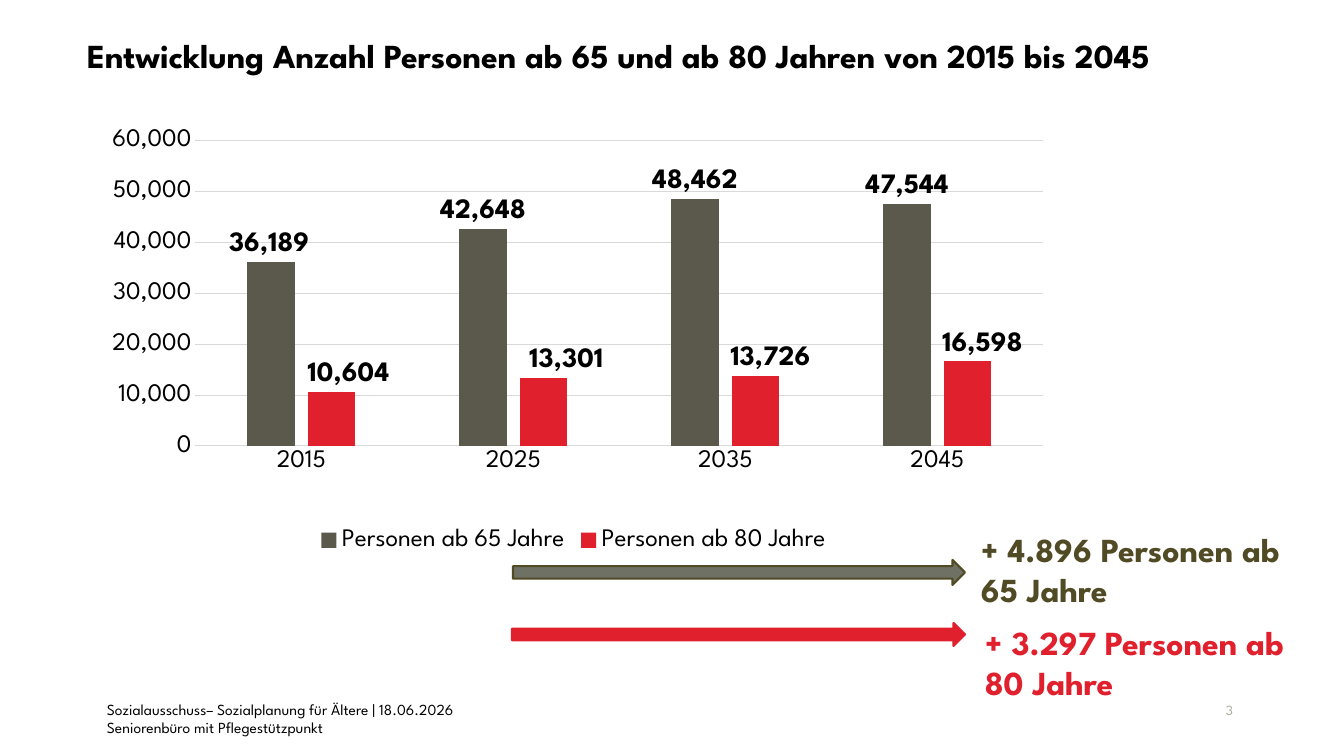
from lxml import etree
from pptx import Presentation
from pptx.chart.data import CategoryChartData
from pptx.dml.color import RGBColor
from pptx.enum.chart import XL_CHART_TYPE, XL_LABEL_POSITION, XL_LEGEND_POSITION, XL_TICK_MARK
from pptx.enum.shapes import MSO_SHAPE
from pptx.enum.text import MSO_ANCHOR, MSO_AUTO_SIZE, PP_ALIGN
from pptx.oxml.ns import qn
from pptx.util import Pt

PX = 914400 / 100.8
FONT = "League Spartan"
BLACK = RGBColor(0x00, 0x00, 0x00)
RED = RGBColor(0xE0, 0x20, 0x2C)
OLIVE = RGBColor(0x51, 0x4B, 0x25)
BAR_GREY = RGBColor(0x5B, 0x59, 0x4B)
ARROW_GREY = RGBColor(0x6F, 0x71, 0x65)
NUMBER_GREY = RGBColor(0xAC, 0xAB, 0x9B)
GRID_GREY = RGBColor(0xD9, 0xD9, 0xD9)

SLIDE_SIZE = (1344, 756)
TITLE = "Entwicklung Anzahl Personen ab 65 und ab 80 Jahren von 2015 bis 2045"
TITLE_AREA = (77, 30, 1167, 50)
FOOTER = [
    "Sozialausschuss– Sozialplanung für Ältere | 18.06.2026",
    "Seniorenbüro mit Pflegestützpunkt",
]
FOOTER_AREA = (97, 695, 496, 48)
PAGE_NUMBER = "3"
PAGE_NUMBER_AREA = (941, 696, 302, 27)

CHART_AREA = (85, 108, 977, 449)
PLOT_LAYOUT = {"x": 0.113, "y": 0.072, "w": 0.868, "h": 0.681}
YEARS = ["2015", "2025", "2035", "2045"]
# name, values, colour, sideways label shift in px by point index
SERIES = [
    ("Personen ab 65 Jahre", (36189, 42648, 48462, 47544), BAR_GREY, {0: -2}),
    ("Personen ab 80 Jahre", (10604, 13301, 13726, 16598), RED, {0: 17, 1: 23, 2: 15, 3: 15}),
]
# arrow area, fill, line and text colour, text, text area
GROWTH = [
    ((513, 560, 452, 25), ARROW_GREY, OLIVE, "+ 4.896 Personen ab 65 Jahre", (971, 524, 325, 92)),
    ((512, 623, 453, 23), RED, RED, "+ 3.297 Personen ab 80 Jahre", (975, 617, 338, 92)),
]


def emu(area):
    return [round(length * PX) for length in area]


def style_font(font, size, color=BLACK, bold=False):
    font.name = FONT
    font.size = Pt(size)
    font.bold = bold
    font.color.rgb = color


def write(box, lines, size, color=BLACK, bold=False, align=PP_ALIGN.LEFT, anchor=MSO_ANCHOR.TOP):
    frame = box.text_frame
    frame.word_wrap = True
    frame.auto_size = MSO_AUTO_SIZE.NONE
    frame.vertical_anchor = anchor
    for index, line in enumerate(lines):
        para = frame.add_paragraph() if index else frame.paragraphs[0]
        para.alignment = align
        span = para.add_run()
        span.text = line
        style_font(span.font, size, color, bold)


def manual_layout(**settings):
    """Return a c:layout element holding the given manual settings."""
    layout = etree.Element(qn("c:layout"))
    manual = etree.SubElement(layout, qn("c:manualLayout"))
    for name, value in settings.items():
        etree.SubElement(manual, qn("c:" + name)).set("val", str(value))
    return layout


def style_axis(axis):
    style_font(axis.tick_labels.font, 18)
    axis.major_tick_mark = XL_TICK_MARK.NONE
    axis.minor_tick_mark = XL_TICK_MARK.NONE


def style_labels(labels):
    style_font(labels.font, 20, bold=True)
    labels.position = XL_LABEL_POSITION.OUTSIDE_END


def add_population_chart(page):
    data = CategoryChartData(number_format="#,##0")
    data.categories = YEARS
    for name, values, _, _ in SERIES:
        data.add_series(name, values)
    chart = page.shapes.add_chart(XL_CHART_TYPE.COLUMN_CLUSTERED, *emu(CHART_AREA), data).chart
    style_font(chart.font, 18)
    chart.has_title = False
    chart.has_legend = True
    chart.legend.position = XL_LEGEND_POSITION.BOTTOM
    chart.legend.include_in_layout = False
    style_font(chart.legend.font, 18)

    style_axis(chart.category_axis)
    chart.category_axis.format.line.color.rgb = GRID_GREY
    chart.category_axis.format.line.width = Pt(0.75)
    scale = chart.value_axis
    style_axis(scale)
    scale.minimum_scale, scale.maximum_scale, scale.major_unit = 0, 60000, 10000
    scale.tick_labels.number_format = "#,##0"
    scale.tick_labels.number_format_is_linked = False
    scale.format.line.fill.background()
    scale.major_gridlines.format.line.color.rgb = GRID_GREY
    scale.major_gridlines.format.line.width = Pt(0.75)

    plot = chart.plots[0]
    plot.gap_width = 219
    plot.overlap = -27
    plot.vary_by_categories = False
    for series, (_, _, color, shifts) in zip(plot.series, SERIES):
        series.format.fill.solid()
        series.format.fill.fore_color.rgb = color
        labels = series.data_labels
        labels.show_value = True
        style_labels(labels)
        for index, shift in shifts.items():
            style_labels(series.points[index].data_label)
        for label in labels._element.findall(qn("c:dLbl")):
            point = label.find(qn("c:idx"))
            shift = shifts[int(point.get("val"))]
            point.addnext(manual_layout(x=round(shift / CHART_AREA[2], 4), y=0))

    plot_area = chart._chartSpace.find(".//" + qn("c:plotArea"))
    for layout in plot_area.findall(qn("c:layout")):
        plot_area.remove(layout)
    plot_area.insert(0, manual_layout(layoutTarget="inner", xMode="edge", yMode="edge", **PLOT_LAYOUT))


def add_growth(page, arrow_area, fill, accent, text, text_area):
    arrow = page.shapes.add_shape(MSO_SHAPE.RIGHT_ARROW, *emu(arrow_area))
    arrow.shadow.inherit = False
    arrow.fill.solid()
    arrow.fill.fore_color.rgb = fill
    arrow.line.color.rgb = accent
    arrow.line.width = Pt(1.5)
    write(page.shapes.add_textbox(*emu(text_area)), [text], 24, accent, bold=True)


def main():
    deck = Presentation()
    deck.slide_width, deck.slide_height = emu(SLIDE_SIZE)
    page = deck.slides.add_slide(deck.slide_layouts[5])
    title = page.shapes.title
    title.left, title.top, title.width, title.height = emu(TITLE_AREA)
    write(title, [TITLE], 24, bold=True)
    write(page.shapes.add_textbox(*emu(FOOTER_AREA)), FOOTER, 11)
    write(page.shapes.add_textbox(*emu(PAGE_NUMBER_AREA)), [PAGE_NUMBER], 10, NUMBER_GREY,
          align=PP_ALIGN.RIGHT, anchor=MSO_ANCHOR.MIDDLE)
    add_population_chart(page)
    for growth in GROWTH:
        add_growth(page, *growth)
    deck.save("out.pptx")


if __name__ == "__main__":
    main()
